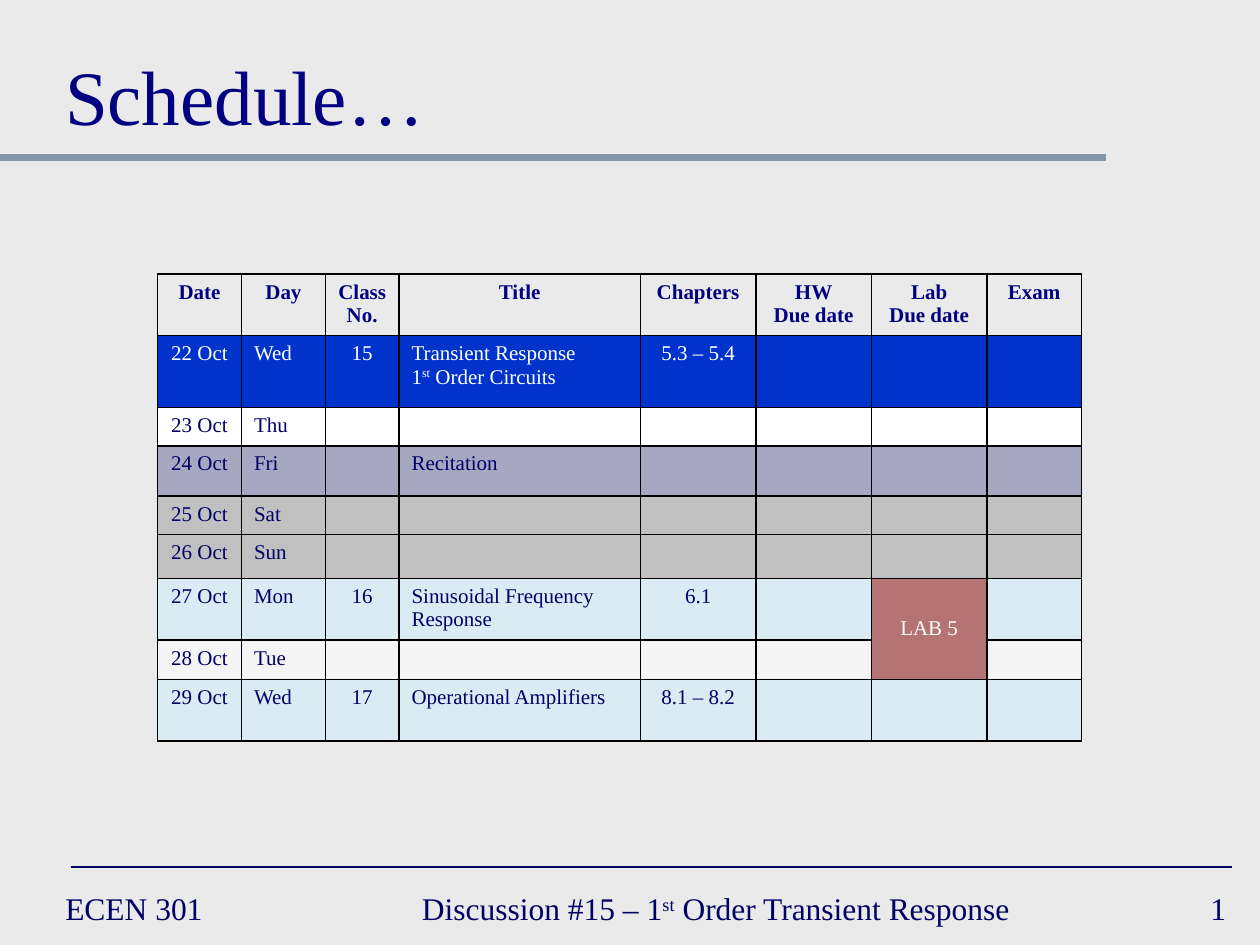
from dataclasses import dataclass

from lxml.etree import SubElement
from pptx import Presentation
from pptx.dml.color import RGBColor
from pptx.enum.shapes import MSO_CONNECTOR
from pptx.enum.text import MSO_ANCHOR, PP_ALIGN
from pptx.oxml.ns import qn
from pptx.util import Inches, Pt


@dataclass(frozen=True)
class Theme:
    font: str = "Times New Roman"
    back: str = "EAEAEA"
    title: str = "000080"
    text: str = "000066"
    light: str = "FFFFFF"
    rule: str = "8495A9"
    border: str = "000000"
    title_size: int = 44
    footer_size: int = 18
    table_size: int = 12


T = Theme()
W, H = 10, 7.5
TWELFTH = 1 / 12
COLS = [8, 8, 7, 23, 11, 11, 11, 9]
LEFT_COLS = (1, 3)
HEADER = ["Date", "Day", "Class\nNo.", "Title", "Chapters",
          "HW\nDue date", "Lab\nDue date", "Exam"]
TODAY = ("0033CC", 100)
OPEN_DAY = ("FFFFFF", 100)
RECITATION = ("666699", 50)
WEEKEND = ("C0C0C0", 100)
LECTURE = ("CCECFF", 50)
FREE_DAY = ("FFFFFF", 50)
LAB = ("800000", 50)
ROWS = [
    (0.49, None, HEADER),
    (0.57, TODAY, ["22 Oct", "Wed", "15", "Transient Response\n1^st^ Order Circuits", "5.3 – 5.4"]),
    (0.3, OPEN_DAY, ["23 Oct", "Thu"]),
    (0.4, RECITATION, ["24 Oct", "Fri", "", "Recitation"]),
    (0.3, WEEKEND, ["25 Oct", "Sat"]),
    (0.35, WEEKEND, ["26 Oct", "Sun"]),
    (0.49, LECTURE, ["27 Oct", "Mon", "16", "Sinusoidal Frequency Response", "6.1"]),
    (0.31, FREE_DAY, ["28 Oct", "Tue"]),
    (0.49, LECTURE, ["29 Oct", "Wed", "17", "Operational Amplifiers", "8.1 – 8.2"]),
]


def write(tf, text, size, color, align=PP_ALIGN.LEFT, bold=False):
    for i, line in enumerate(text.split("\n")):
        p = tf.paragraphs[0] if i == 0 else tf.add_paragraph()
        p.alignment = align
        for j, part in enumerate(line.split("^")):
            if not part:
                continue
            r = p.add_run()
            r.text = part
            for name, value in dict(name=T.font, size=Pt(size), bold=bold).items():
                setattr(r.font, name, value)
            r.font.color.rgb = RGBColor.from_string(color)
            if j % 2:
                r.font._element.set("baseline", "30000")
        if not line:
            p._p.get_or_add_endParaRPr().set("sz", str(size * 100))


def add_rule(s, x1, x2, y, color, width):
    ln = s.shapes.add_connector(MSO_CONNECTOR.STRAIGHT, *map(Inches, (x1, y, x2, y)))
    ln.line.color.rgb = RGBColor.from_string(color)
    ln.line.width = Pt(width)
    SubElement(ln._element.spPr, qn("a:effectLst"))


def add_title(s, box, text):
    sp = s.shapes.title
    for name, value in zip(("left", "top", "width", "height"), box):
        setattr(sp, name, Inches(value))
    tf = sp.text_frame
    tf.vertical_anchor = MSO_ANCHOR.BOTTOM
    write(tf, text, T.title_size, T.title)
    add_rule(s, 0, 0.878 * W, H / 6, T.rule, 4)


def add_footer(s, top, height):
    add_rule(s, 0.056 * W, 0.978 * W, top - 0.12, T.text, 1)
    parts = [
        (0.042, 0.217, "ECEN 301", PP_ALIGN.LEFT),
        (0.325, 0.5, "Discussion #15 – 1^st^ Order Transient Response", PP_ALIGN.LEFT),
        (0.833, 0.15, "1", PP_ALIGN.RIGHT),
    ]
    for x, width, text, align in parts:
        sp = s.shapes.add_textbox(*map(Inches, (x * W, top, width * W, height)))
        tf = sp.text_frame
        tf.word_wrap = True
        tf.vertical_anchor = MSO_ANCHOR.MIDDLE
        write(tf, text, T.footer_size, T.text, align)


def paint_cell(cell, fill):
    tcPr = cell._tc.get_or_add_tcPr()
    for side in ("a:lnL", "a:lnR", "a:lnT", "a:lnB"):
        ln = SubElement(tcPr, qn(side), w=str(Pt(1)))
        SubElement(SubElement(ln, qn("a:solidFill")), qn("a:srgbClr"), val=T.border)
    if fill is None:
        cell.fill.background()
        return
    color, opacity = fill
    cell.fill.solid()
    cell.fill.fore_color.rgb = RGBColor.from_string(color)
    if opacity < 100:
        clr = tcPr.find(qn("a:solidFill")).find(qn("a:srgbClr"))
        SubElement(clr, qn("a:alpha"), val=str(opacity * 1000))


def add_schedule(s, left, top):
    width = sum(COLS) * TWELFTH
    height = sum(row[0] for row in ROWS)
    frame = s.shapes.add_table(len(ROWS), len(COLS), *map(Inches, (left, top, width, height)))
    table = frame.table
    table.first_row = table.horz_banding = False
    for col, units in zip(table.columns, COLS):
        col.width = Inches(units * TWELFTH)
    lab_cells = {(6, 6), (7, 6)}
    for i, (row_height, fill, texts) in enumerate(ROWS):
        table.rows[i].height = Inches(row_height)
        header = fill is None
        color = T.title if header else T.light if fill == TODAY else T.text
        for j in range(len(COLS)):
            cell = table.cell(i, j)
            paint_cell(cell, LAB if (i, j) in lab_cells else fill)
            if (i, j) == (6, 6):
                continue
            align = PP_ALIGN.LEFT if j in LEFT_COLS and not header else PP_ALIGN.CENTER
            text = texts[j] if j < len(texts) else ""
            write(cell.text_frame, text, T.table_size, color, align, header)
    lab = table.cell(6, 6)
    lab.merge(table.cell(7, 6))
    lab.vertical_anchor = MSO_ANCHOR.MIDDLE
    write(lab.text_frame, "LAB 5", T.table_size, T.light, PP_ALIGN.CENTER)


def main():
    prs = Presentation()
    prs.slide_width, prs.slide_height = Inches(W), Inches(H)
    s = prs.slides.add_slide(prs.slide_layouts[5])
    s.background.fill.solid()
    s.background.fill.fore_color.rgb = RGBColor.from_string(T.back)
    add_title(s, (W / 24, H / 45, 0.925 * W, 1), "Schedule…")
    add_schedule(s, W / 8, 0.29 * H)
    add_footer(s, H * 14 / 15, H / 18)
    prs.save("out.pptx")


if __name__ == "__main__":
    main()
